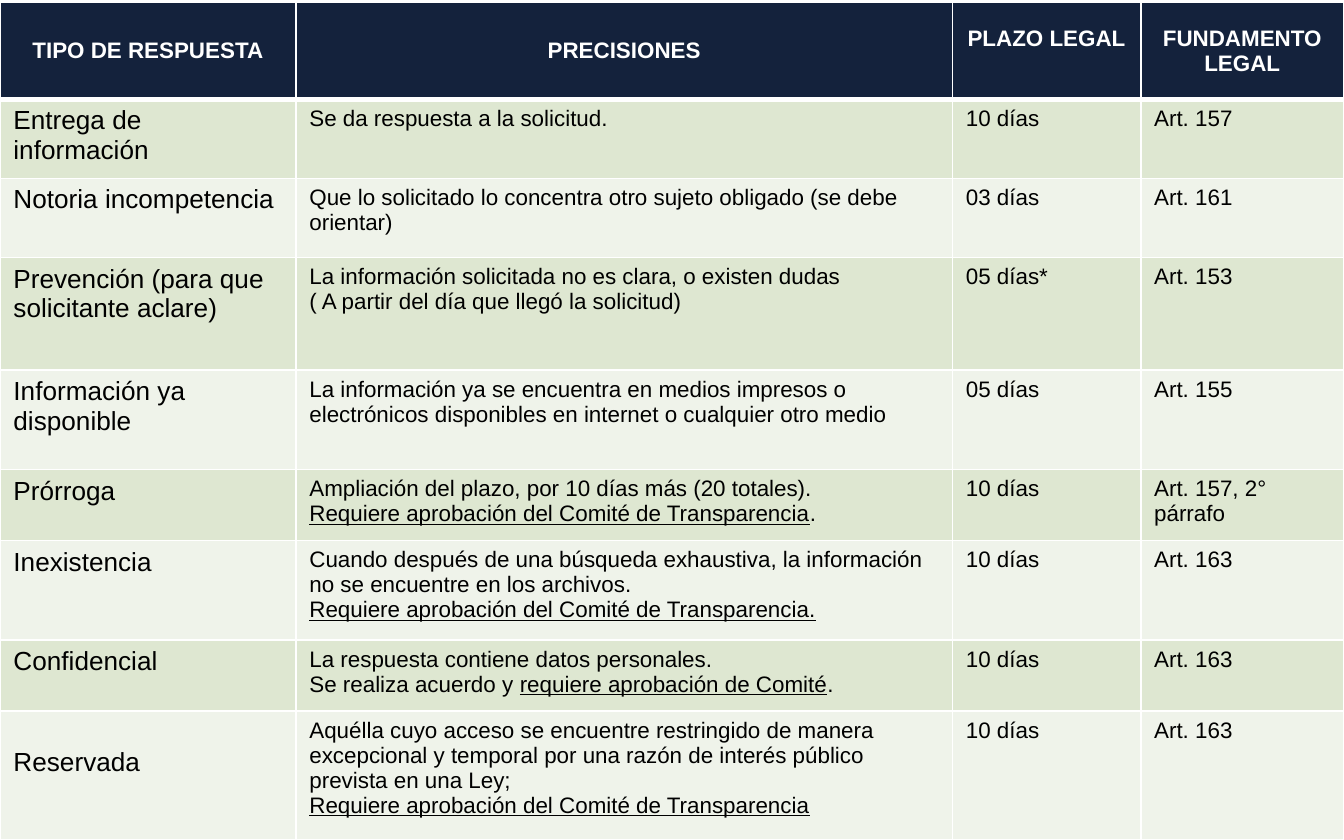
from dataclasses import dataclass

from lxml.etree import SubElement
from pptx import Presentation
from pptx.dml.color import RGBColor as Rgb
from pptx.enum.text import MSO_ANCHOR as Anchor, PP_ALIGN as Align
from pptx.oxml import parse_xml
from pptx.oxml.ns import nsdecls, qn
from pptx.util import Inches, Pt


@dataclass(frozen=True)
class Theme:
    """Hold the colours, the font and the type sizes."""
    font: str = "Arial"
    navy: str = "14223C"
    bands: tuple = ("DEE7D1", "EFF3EA")
    white: str = "FFFFFF"
    black: str = "000000"
    label: int = 14
    body: int = 12
    thin: int = 1
    thick: int = 3


THEME = Theme()
SIZE = (10, 6.25)
COLS = (2.2, 4.88, 1.4, 1.51)
ROWS = (0.72, 0.59, 0.59, 0.84, 0.74, 0.53, 0.74, 0.53, 0.96)
HEAD = ("TIPO DE RESPUESTA", "PRECISIONES", "PLAZO LEGAL", "FUNDAMENTO LEGAL")
VOTE = "Requiere aprobación del Comité de Transparencia"
BODY = (
    ("Entrega de información", ["Se da respuesta a la solicitud."],
     "10 días", "Art. 157"),
    ("Notoria incompetencia",
     ["Que lo solicitado lo concentra otro sujeto obligado (se debe orientar)"],
     "03 días", "Art. 161"),
    ("Prevención (para que solicitante aclare)",
     ["La información solicitada no es clara, o existen dudas",
      "( A partir del día que llegó la solicitud)"],
     "05 días*", "Art. 153"),
    ("Información ya disponible",
     ["La información ya se encuentra en medios impresos o electrónicos "
      "disponibles en internet o cualquier otro medio"],
     "05 días", "Art. 155"),
    ("Prórroga",
     [f"Ampliación del plazo, por 10 días más (20 totales).\n_{VOTE}_."],
     "10 días", "Art. 157, 2° párrafo"),
    ("Inexistencia",
     ["Cuando después de una búsqueda exhaustiva, la información no se "
      "encuentre en los archivos.", f"_{VOTE}._"],
     "10 días", "Art. 163"),
    ("Confidencial",
     ["La respuesta contiene datos personales. \n"
      "Se realiza acuerdo y _requiere aprobación de Comité_."],
     "10 días", "Art. 163"),
    ("Reservada",
     ["Aquélla cuyo acceso se encuentre restringido de manera excepcional y "
      f"temporal por una razón de interés público prevista en una Ley;\n_{VOTE}_"],
     "10 días", "Art. 163"),
)


def write(para, text, size, color, bold=False):
    """Add text run by run, with underscores around underlined words."""
    for i, part in enumerate(text.split("_")):
        for j, line in enumerate(part.split("\n")):
            if j:
                para.add_line_break()
                SubElement(para._p[-1], qn("a:rPr"), sz=str(size * 100))
            if line:
                run = para.add_run()
                run.text = line
                font = run.font
                font.name, font.size, font.bold = THEME.font, Pt(size), bold
                font.underline = True if i % 2 else None
                font.color.rgb = Rgb.from_string(color)


def paint(cell, color, top, base):
    """Fill a cell and rule its four edges in white."""
    cell.fill.solid()
    cell.fill.fore_color.rgb = Rgb.from_string(color)
    edges = {"L": THEME.thin, "R": THEME.thin, "T": top, "B": base}
    for i, (side, width) in enumerate(edges.items()):
        cell._tc.tcPr.insert(i, parse_xml(
            f'<a:ln{side} {nsdecls("a")} w="{Pt(width)}"><a:solidFill>'
            f'<a:srgbClr val="{THEME.white}"/></a:solidFill></a:ln{side}>'))


def head(cells):
    """Write the heading row."""
    for cell, text in zip(cells, HEAD):
        paint(cell, THEME.navy, THEME.thin, THEME.thick)
        cell.vertical_anchor = Anchor.MIDDLE
        para = cell.text_frame.paragraphs[0]
        para.alignment = Align.CENTER
        write(para, text, THEME.body, THEME.white, True)
    cells[2].margin_bottom = Inches(0.23)


def entry(cells, data, n):
    """Write one banded row of replies."""
    for i, (cell, item) in enumerate(zip(cells, data)):
        paint(cell, THEME.bands[n % 2], THEME.thin if n else THEME.thick, THEME.thin)
        frame = cell.text_frame
        for j, text in enumerate([item] if isinstance(item, str) else item):
            para = frame.add_paragraph() if j else frame.paragraphs[0]
            write(para, text, THEME.body if i else THEME.label, THEME.black)


def grid(slide, left, top, width, height):
    """Place the table of replies in the given box."""
    table = slide.shapes.add_table(
        len(ROWS), len(COLS), *map(Inches, (left, top, width, height))).table
    table.horz_banding = False
    for col, share in zip(table.columns, COLS):
        col.width = Inches(width * share / sum(COLS))
    for row, share in zip(table.rows, ROWS):
        row.height = Inches(height * share / sum(ROWS))
    rows = [list(row.cells) for row in table.rows]
    head(rows[0])
    for n, data in enumerate(BODY):
        entry(rows[n + 1], data, n)
    rows[-1][0].margin_top = Inches(0.27)


def main():
    """Build the slide and save it."""
    deck = Presentation()
    deck.slide_width, deck.slide_height = map(Inches, SIZE)
    slide = deck.slides.add_slide(deck.slide_layouts[6])
    wide, high = SIZE
    grid(slide, 0, 0.02, wide, high - 0.02)
    deck.save("out.pptx")


if __name__ == "__main__":
    main()
